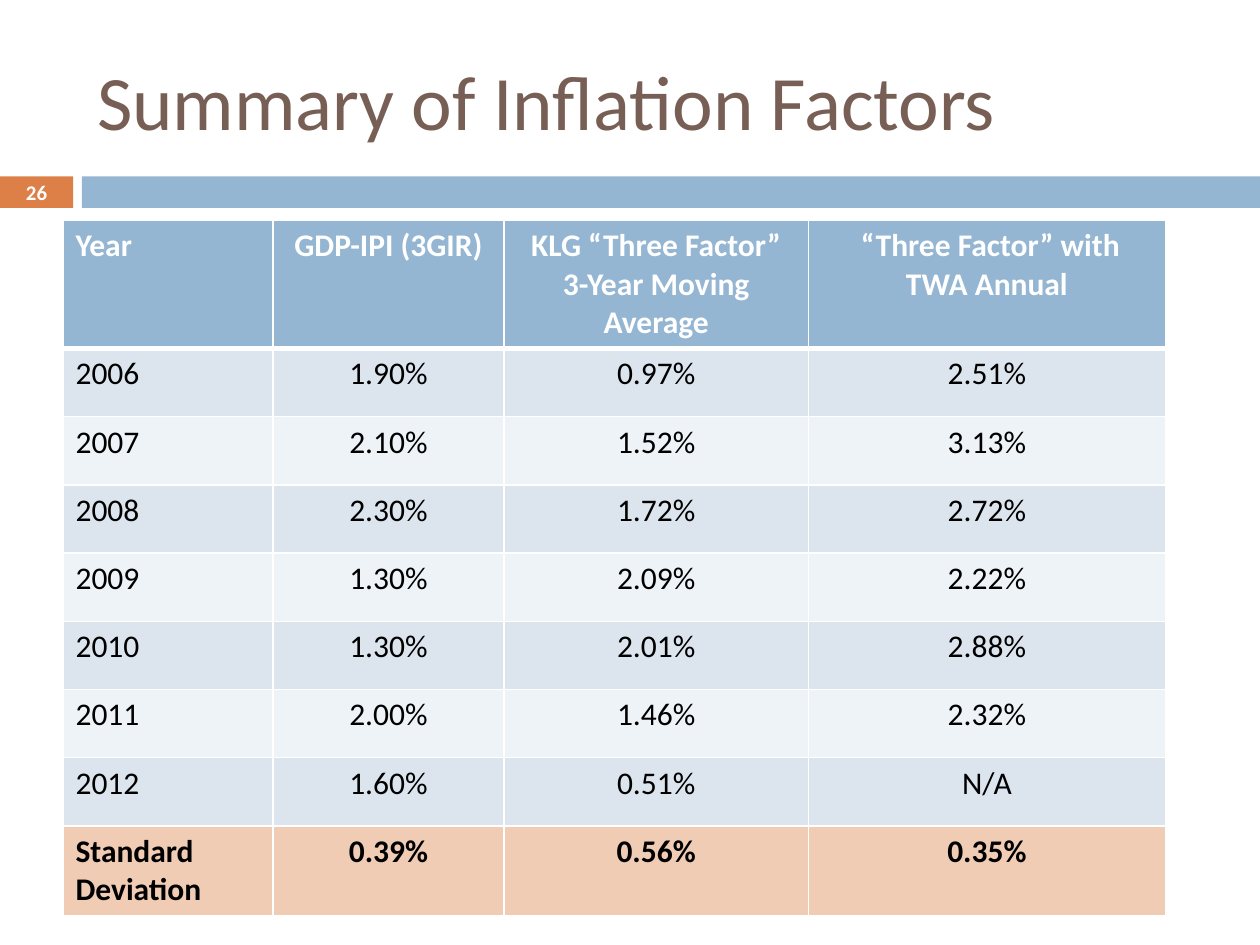
from dataclasses import dataclass

from lxml import etree
from pptx import Presentation
from pptx.dml.color import RGBColor
from pptx.enum.shapes import MSO_SHAPE
from pptx.enum.text import MSO_ANCHOR, PP_ALIGN
from pptx.oxml.ns import qn
from pptx.util import Inches, Pt

RECTANGLE = MSO_SHAPE.RECTANGLE
MIDDLE = MSO_ANCHOR.MIDDLE
LEFT, CENTER = PP_ALIGN.LEFT, PP_ALIGN.CENTER
TITLE_ONLY = 5


@dataclass(frozen=True)
class Theme:
    font: str = "Calibri"
    title: str = "775F55"
    blue: str = "94B6D2"
    orange: str = "DD8047"
    bands: tuple = ("DCE5EE", "EEF3F7")
    summary: str = "F1CCB5"
    white: str = "FFFFFF"
    black: str = "000000"
    title_size: float = 44
    table_size: float = 18
    number_size: float = 11.9


THEME = Theme()
WIDTH, HEIGHT = Inches(10), Inches(7.5)
BAR_TOP, BAR_HEIGHT = 1.4, 0.25
NUMBER_WIDTH, BAR_LEFT = 0.58, 0.65
COLUMN_UNITS = (20, 22, 29, 34)
UNIT = Inches(1) // 12
HEADER_HEIGHT, ROW_HEIGHT = 0.95, 6.5 / 12

HEADINGS = (
    "Year",
    "GDP-IPI (3GIR)",
    "KLG “Three Factor” 3-Year Moving Average",
    " “Three Factor” with TWA Annual",
)
YEARS = (
    ("2006", "1.90%", "0.97%", "2.51%"),
    ("2007", "2.10%", "1.52%", "3.13%"),
    ("2008", "2.30%", "1.72%", "2.72%"),
    ("2009", "1.30%", "2.09%", "2.22%"),
    ("2010", "1.30%", "2.01%", "2.88%"),
    ("2011", "2.00%", "1.46%", "2.32%"),
    ("2012", "1.60%", "0.51%", "N/A"),
)
DEVIATION = ("Standard Deviation", "0.39%", "0.56%", "0.35%")


def write(frame, text, size, color, bold=False, align=LEFT):
    frame.text = text
    paragraph = frame.paragraphs[0]
    paragraph.alignment = align
    font = paragraph.runs[0].font
    for name, value in {"name": THEME.font, "size": Pt(size), "bold": bold}.items():
        setattr(font, name, value)
    font.color.rgb = RGBColor.from_string(color)


def place(shape, left, top, width, height):
    bounds = {"left": left, "top": top, "width": width, "height": height}
    for name, value in bounds.items():
        setattr(shape, name, Inches(value))


def add_title(slide, text):
    title = slide.shapes.title
    place(title, 0.67, 0.25, 8.92, 1.08)
    write(title.text_frame, text, THEME.title_size, THEME.title)
    title.text_frame.vertical_anchor = MIDDLE


def add_bar(slide, left, width, color):
    bar = slide.shapes.add_shape(
        RECTANGLE, Inches(left), Inches(BAR_TOP), Inches(width), Inches(BAR_HEIGHT)
    )
    bar.shadow.inherit = False
    bar.fill.solid()
    bar.fill.fore_color.rgb = RGBColor.from_string(color)
    bar.line.fill.background()


def add_page_number(slide, number):
    box = slide.shapes.add_textbox(
        0, Inches(BAR_TOP - 0.01), Inches(NUMBER_WIDTH), Inches(BAR_HEIGHT + 0.02)
    )
    frame = box.text_frame
    formats = {
        "word_wrap": True,
        "vertical_anchor": MIDDLE,
        "margin_top": 0,
        "margin_bottom": 0,
    }
    for name, value in formats.items():
        setattr(frame, name, value)
    write(frame, number, THEME.number_size, THEME.white, True, CENTER)


def add_borders(cell, widths):
    properties = cell._tc.get_or_add_tcPr()
    for side, width in widths.items():
        line = etree.SubElement(properties, qn(f"a:ln{side}"), w=str(Pt(width)))
        fill = etree.SubElement(line, qn("a:solidFill"))
        etree.SubElement(fill, qn("a:srgbClr"), val=THEME.white)


def fill_row(table, index, texts, fill, color, bold):
    widths = {
        "L": 1,
        "R": 1,
        "T": 3 if index == 1 else 1,
        "B": 3 if index == 0 else 1,
    }
    for column, text in enumerate(texts):
        cell = table.cell(index, column)
        align = CENTER if column else LEFT
        write(cell.text_frame, text, THEME.table_size, color, bold, align)
        add_borders(cell, widths)
        cell.fill.solid()
        cell.fill.fore_color.rgb = RGBColor.from_string(fill)


def add_factor_table(slide):
    rows = [(HEADINGS, THEME.blue, THEME.white, True)]
    rows += [
        (year, THEME.bands[i % 2], THEME.black, False) for i, year in enumerate(YEARS)
    ]
    rows.append((DEVIATION, THEME.summary, THEME.black, True))
    table = slide.shapes.add_table(
        len(rows), len(HEADINGS), Inches(0.5), Inches(1.75),
        UNIT * sum(COLUMN_UNITS),
        Inches(HEADER_HEIGHT + ROW_HEIGHT * (len(rows) - 1)),
    ).table
    for column, units in zip(table.columns, COLUMN_UNITS):
        column.width = UNIT * units
    for index, row in enumerate(rows):
        table.rows[index].height = Inches(ROW_HEIGHT if index else HEADER_HEIGHT)
        fill_row(table, index, *row)


def main():
    deck = Presentation()
    deck.slide_width, deck.slide_height = WIDTH, HEIGHT
    slide = deck.slides.add_slide(deck.slide_layouts[TITLE_ONLY])
    add_bar(slide, 0, NUMBER_WIDTH, THEME.orange)
    add_bar(slide, BAR_LEFT, 10 - BAR_LEFT, THEME.blue)
    add_title(slide, "Summary of Inflation Factors")
    add_factor_table(slide)
    add_page_number(slide, "26")
    deck.save("out.pptx")


if __name__ == "__main__":
    main()
